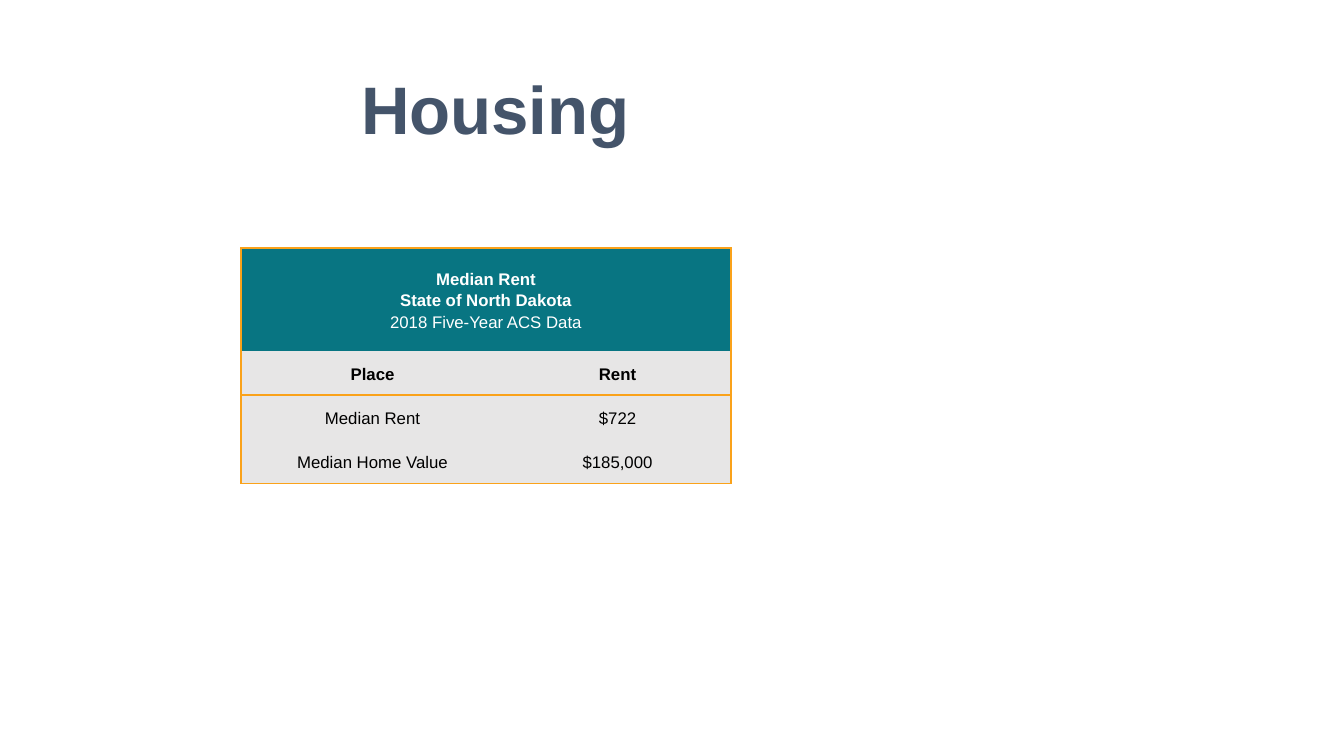
from lxml import etree
from pptx import Presentation
from pptx.dml.color import RGBColor
from pptx.enum.text import MSO_ANCHOR, PP_ALIGN
from pptx.oxml.ns import qn
from pptx.util import Inches, Pt

CENTER = PP_ALIGN.CENTER
MIDDLE = MSO_ANCHOR.MIDDLE
TITLE_ONLY_LAYOUT = 5
FONT = "Arial"
SLATE, TEAL, GRAY, ORANGE = "44546A", "087582", "E7E6E6", "FAA21A"
WHITE, BLACK = "FFFFFF", "000000"

TABLE_LEFT, TABLE_TOP = 2.39, 2.46
COLUMN_WIDTHS = [2.61, 2.25]
ROW_HEIGHTS = [1.02, 0.44, 0.44, 0.44]
HEADING = [("Median Rent", True), ("State of North Dakota", True),
           ("2018 Five-Year ACS Data", False)]
ROWS = [("Place", "Rent"), ("Median Rent", "$722"),
        ("Median Home Value", "$185,000")]


def color(hex_code):
    return RGBColor.from_string(hex_code)


def add_run(paragraph, text, size, hex_code, bold):
    paragraph.alignment = CENTER
    run = paragraph.add_run()
    run.text = text
    run.font.name = FONT
    run.font.size = Pt(size)
    run.font.bold = bold
    run.font.color.rgb = color(hex_code)


def set_borders(cell, visible_sides):
    """Draw the named sides (of L, R, T, B) and clear the others."""
    properties = cell._tc.get_or_add_tcPr()
    for position, side in enumerate("LRTB"):
        line = etree.Element(qn(f"a:ln{side}"), w=str(Pt(1)))
        if side in visible_sides:
            fill = etree.SubElement(line, qn("a:solidFill"))
            etree.SubElement(fill, qn("a:srgbClr"), val=ORANGE)
        else:
            etree.SubElement(line, qn("a:noFill"))
        properties.insert(position, line)


def fill_cell(cell, lines, fill_color, text_color, borders):
    """Write (text, bold) lines into a cell and format it."""
    cell.fill.solid()
    cell.fill.fore_color.rgb = color(fill_color)
    cell.vertical_anchor = MIDDLE
    cell.margin_left = cell.margin_right = Inches(0.07)
    cell.margin_top = cell.margin_bottom = 0
    frame = cell.text_frame
    for index, (text, bold) in enumerate(lines):
        paragraph = frame.add_paragraph() if index else frame.paragraphs[0]
        paragraph.line_spacing = 1.15
        add_run(paragraph, text, 12, text_color, bold)
    set_borders(cell, borders)


def add_title(slide, text):
    title = slide.shapes.title
    title.left, title.top = Inches(0.28), Inches(0.62)
    title.width, title.height = Inches(9.27), Inches(0.9)
    title.text_frame.vertical_anchor = MIDDLE
    add_run(title.text_frame.paragraphs[0], text, 48, SLATE, True)


def add_housing_table(slide):
    table = slide.shapes.add_table(
        len(ROW_HEIGHTS), len(COLUMN_WIDTHS), Inches(TABLE_LEFT), Inches(TABLE_TOP),
        Inches(sum(COLUMN_WIDTHS)), Inches(sum(ROW_HEIGHTS))).table
    table.first_row = table.horz_banding = False
    for column, width in zip(table.columns, COLUMN_WIDTHS):
        column.width = Inches(width)
    for row, height in zip(table.rows, ROW_HEIGHTS):
        row.height = Inches(height)

    table.cell(0, 0).merge(table.cell(0, 1))
    fill_cell(table.cell(0, 0), HEADING, TEAL, WHITE, "LRT")
    set_borders(table.cell(0, 1), "RT")
    horizontal_borders = ["B", "T", "B"]
    for row, texts in enumerate(ROWS):
        for column, text in enumerate(texts):
            borders = "LR"[column] + horizontal_borders[row]
            fill_cell(table.cell(row + 1, column), [(text, row == 0)],
                      GRAY, BLACK, borders)


def main():
    presentation = Presentation()
    presentation.slide_width = Inches(13.33)
    presentation.slide_height = Inches(7.5)
    layout = presentation.slide_layouts[TITLE_ONLY_LAYOUT]
    slide = presentation.slides.add_slide(layout)
    add_title(slide, "Housing")
    add_housing_table(slide)
    presentation.save("out.pptx")


if __name__ == "__main__":
    main()
